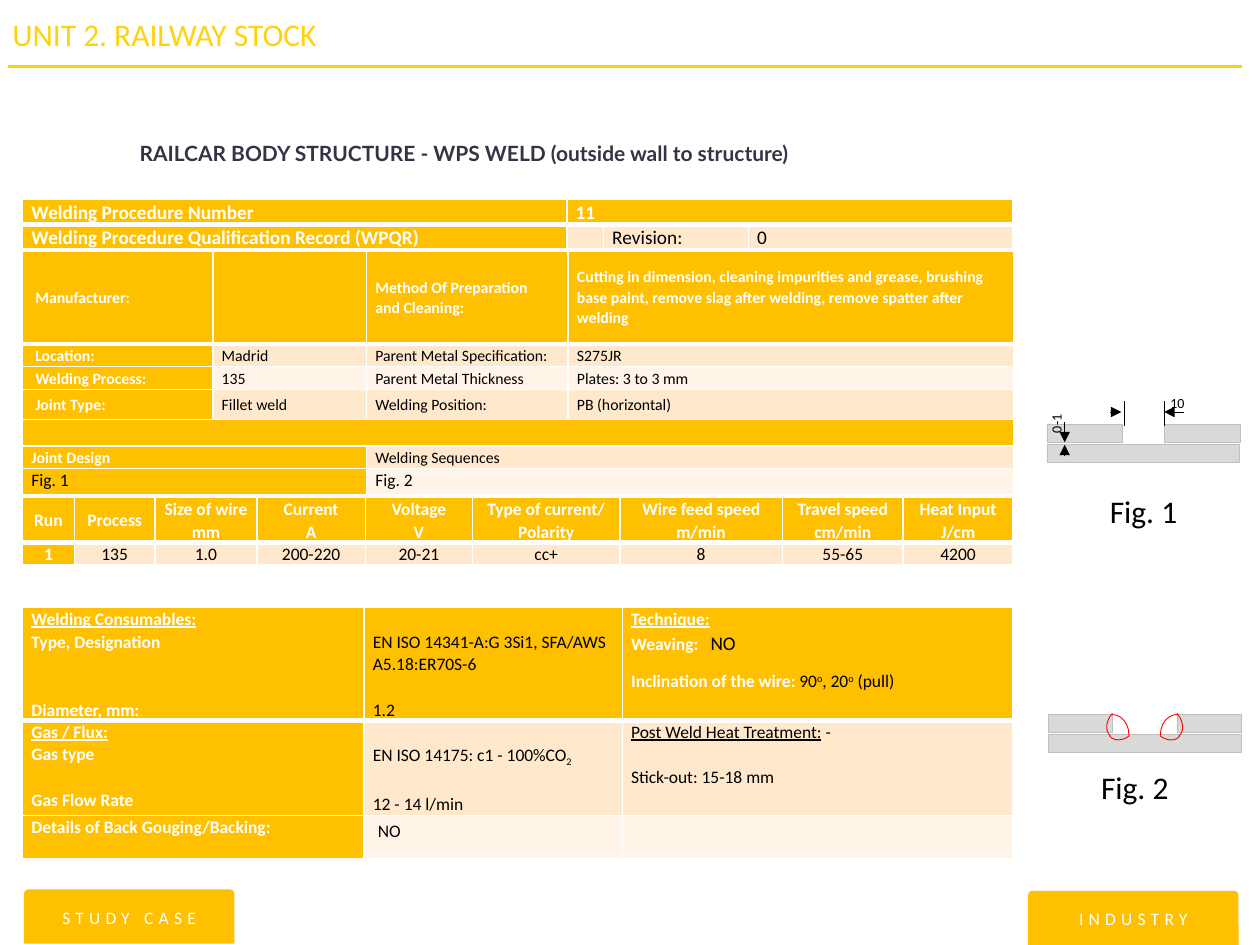
from dataclasses import dataclass

from lxml import etree
from pptx import Presentation
from pptx.dml.color import RGBColor
from pptx.enum import shapes, text
from pptx.oxml import ns
from pptx.util import Inches, Pt


class Theme:
    gold, yellow, white, black = "FFC000", "FED30D", "FFFFFF", "000000"
    ink, steel, steel_edge, weld = "363346", "D9D9D9", "BFBFBF", "FF0000"
    fills = {"G": gold, "L": "FFE8CC", "P": "FFF4E7"}
    body, heading = "Calibri", "Lato"
    title, subtitle, large, normal, small, tiny = 18, 12, 11, 10, 9, 8


@dataclass
class Box:
    left: float
    top: float
    width: float
    height: float

    def inside(self, x, y, width, height):
        return Box(self.left + x, self.top + y, width, height)

    def emu(self):
        return [Inches(v) for v in (self.left, self.top, self.width, self.height)]


@dataclass
class Span:
    text: str
    color: str = None
    size: float = None
    underline: bool = False
    baseline: int = 0


def color(value):
    return RGBColor.from_string(value)


def style(run, size, ink, font=Theme.body, bold=False):
    run.font.size, run.font.name, run.font.bold = Pt(size), font, bold
    run.font.color.rgb = color(ink)


def add_label(slide, box, words, size, ink=Theme.black, wrap=False, **font):
    shape = slide.shapes.add_textbox(*box.emu())
    frame = shape.text_frame
    frame.text, frame.word_wrap = words, wrap
    style(frame.paragraphs[0].runs[0], size, ink, **font)
    return shape


def add_line(slide, box, start, end, ink=Theme.black, width=0.25, arrow=False):
    (x1, y1), (x2, y2) = start, end
    line = slide.shapes.add_connector(
        shapes.MSO_CONNECTOR.STRAIGHT, Inches(box.left + x1), Inches(box.top + y1),
        Inches(box.left + x2), Inches(box.top + y2))
    line.line.color.rgb, line.line.width = color(ink), Pt(width)
    properties = line._element.spPr
    if arrow:
        etree.SubElement(properties.find(ns.qn("a:ln")), ns.qn("a:tailEnd"), type="triangle")
    etree.SubElement(properties, ns.qn("a:effectLst"))


def add_plate(slide, box):
    plate = slide.shapes.add_shape(shapes.MSO_SHAPE.RECTANGLE, *box.emu())
    plate.shadow.inherit = False
    plate.fill.solid()
    plate.fill.fore_color.rgb = color(Theme.steel)
    plate.line.color.rgb, plate.line.width = color(Theme.steel_edge), Pt(0.25)


# Tables
def set_border(cell, bottom):
    properties = cell._tc.get_or_add_tcPr()
    for side, width in (("L", 1), ("R", 1), ("T", 1), ("B", bottom)):
        line = etree.SubElement(properties, ns.qn("a:ln" + side), w=str(Pt(width)))
        fill = etree.SubElement(line, ns.qn("a:solidFill"))
        etree.SubElement(fill, ns.qn("a:srgbClr"), val=Theme.white)


def fill_cell(cell, content, fill, size, align, anchor, bottom):
    """Content is a string or a list of paragraphs, each a string or a list of spans."""
    set_border(cell, bottom)
    cell.fill.solid()
    cell.fill.fore_color.rgb = color(Theme.fills[fill])
    cell.margin_left = cell.margin_right = Inches(0.07)
    cell.margin_top = cell.margin_bottom = 0
    cell.vertical_anchor = anchor
    default_ink = Theme.white if fill == "G" else Theme.black
    frame = cell.text_frame
    for index, spans in enumerate(content if isinstance(content, list) else [content]):
        paragraph = frame.add_paragraph() if index else frame.paragraphs[0]
        paragraph.alignment, paragraph.line_spacing = align, 1.07
        for span in [Span(spans)] if isinstance(spans, str) else spans:
            ink = span.color or default_ink
            for number, words in enumerate(span.text.split("\v")):
                if number:
                    paragraph.add_line_break()
                if not words:
                    continue
                run = paragraph.add_run()
                run.text = words
                style(run, span.size or size, ink, bold=ink == Theme.white)
                run.font.underline = span.underline
                if span.baseline:
                    run._r.get_or_add_rPr().set("baseline", str(span.baseline * 1000))
        if not paragraph.runs:
            paragraph._p.get_or_add_endParaRPr().set("sz", str(size * 100))


def add_grid(slide, box, columns, heights, rows, fills, size, align=text.PP_ALIGN.LEFT,
             anchor=text.MSO_ANCHOR.MIDDLE, merges=()):
    table = slide.shapes.add_table(len(rows), len(columns), *box.emu()).table
    table.first_row = table.horz_banding = False
    for column, width in zip(table.columns, columns):
        column.width = Inches(width)
    for r, (row, height) in enumerate(zip(rows, heights)):
        table.rows[r].height = Inches(height)
        for c, content in enumerate(row):
            fill_cell(table.cell(r, c), content, fills[r][c], size, align, anchor,
                      3 if r == 0 else 1)
    for r, first, last in merges:
        table.cell(r, first).merge(table.cell(r, last))
    return table


def add_procedure(slide, box):
    add_grid(slide, box, [4.32, 0.29, 1.15, 2.1], [0.2, 0.18], [
        ["Welding Procedure Number", "11", "", ""],
        ["Welding Procedure Qualification Record (WPQR)", "", "Revision:", "0"],
    ], ["GGGG", "GLLL"], Theme.large, merges=[(0, 1, 3)])


def add_details(slide, box):
    figures = [[[Span(f"Fig. {n}", Theme.black, Theme.normal)]] for n in (1, 2)]
    table = add_grid(slide, box, [1.51, 1.22, 1.6, 3.54],
                     [0.74, 0.18, 0.18, 0.24, 0.21, 0.18, 0.21], [
        ["Manufacturer:", "", "Method Of Preparation\vand Cleaning:",
         "Cutting in dimension, cleaning impurities and grease, brushing base paint, "
         "remove slag after welding, remove spatter after welding"],
        ["Location:", "Madrid", "Parent Metal Specification:", "S275JR"],
        ["Welding Process:", "135", "Parent Metal Thickness", "Plates: 3 to 3 mm"],
        ["Joint Type:", "Fillet weld", "Welding Position:", "PB (horizontal)"],
        ["", "", "", ""],
        ["Joint Design", "", "Welding Sequences", ""],
        [figures[0], "", figures[1], ""],
    ], ["GGGG", "GLLL", "GPPP", "GLLL", "GGGG", "GGLL", "GGPP"], Theme.small,
        merges=[(4, 0, 3), (5, 0, 1), (5, 2, 3), (6, 0, 1), (6, 2, 3)])
    for r in range(4):
        table.cell(r, 0).margin_left = Inches(0.1)
    for c in (0, 2):
        table.cell(6, c).vertical_anchor = text.MSO_ANCHOR.TOP


def add_runs(slide, box):
    add_grid(slide, box, [0.41, 0.64, 0.81, 0.86, 0.85, 1.17, 1.29, 0.96, 0.87], [0.35, 0.17], [
        ["Run", "Process", "Size of wire\vmm", "Current\vA", "Voltage\vV",
         ["Type of current/", "Polarity"], ["Wire feed speed", "m/min"],
         ["Travel speed", "cm/min"], ["Heat Input", "J/cm"]],
        ["1", "135", "1.0", "200-220", "20-21", "cc+", "8", "55-65", "4200"],
    ], ["G" * 9, "G" + "L" * 8], Theme.normal, align=text.PP_ALIGN.CENTER)


def add_consumables(slide, box):
    def dark(words, **options):
        return Span(words, Theme.black, **options)

    def headed(heading, rest):
        return [Span(heading, underline=True), Span(rest)]

    table = add_grid(slide, box, [2.71, 2.05, 3.1], [0.87, 0.73, 0.34], [
        [[headed("Welding Consumables:", "\vType, Designation"), "Diameter, mm:"],
         [[dark("EN ISO 14341-A:G 3Si1, SFA/AWS A5.18:ER70S-6")], [dark("1.2")]],
         [[Span("Technique:", underline=True)],
          [Span("Weaving:\t"), dark("NO", size=Theme.large)],
          [Span("Inclination of the wire: "), dark("90"), dark("o", baseline=30),
           dark(", 20"), dark("o", baseline=30), dark(" (pull)")]]],
        [[headed("Gas / Flux:", "\vGas type"), "Gas Flow Rate"],
         [[Span("EN ISO 14175: c1 - 100%CO"), Span("2", baseline=-25)], "12 - 14 l/min"],
         [headed("Post Weld Heat Treatment:", " -"), "Stick-out: 15-18 mm"]],
        ["Details of Back Gouging/Backing:", "NO", ""],
    ], ["GGG", "GLL", "GPP"], Theme.normal, anchor=text.MSO_ANCHOR.TOP)
    # Gaps between the entries of a cell
    for r, c, number, gap in ((0, 0, 1, 26), (0, 1, 1, 13), (0, 2, 2, 8),
                              (1, 0, 1, 13), (1, 1, 1, 14), (1, 2, 1, 13)):
        table.cell(r, c).text_frame.paragraphs[number].space_before = Pt(gap)
    for r in (0, 1):
        table.cell(r, 1).margin_top = Inches(0.18)
    table.cell(2, 1).margin_left, table.cell(2, 1).margin_top = Inches(0.11), Inches(0.03)
    weaving = table.cell(0, 2).text_frame.paragraphs[1]._p.get_or_add_pPr()
    tabs = etree.SubElement(weaving, ns.qn("a:tabLst"))
    etree.SubElement(tabs, ns.qn("a:tab"), pos=str(Inches(0.63)), algn="l")


# Figures
def add_joint_design(slide, box):
    for x, y, width in ((0, 0.35, 1.53), (0, 0.19, 0.6), (0.93, 0.19, 0.6)):
        add_plate(slide, box.inside(x, y, width, 0.14))
    for start, end in (((0.14, 0.44), (0.14, 0.35)), ((0.14, 0.17), (0.14, 0.33)),
                       ((0.5, 0.09), (0.59, 0.09)), ((1.09, 0.09), (0.93, 0.09))):
        add_line(slide, box, start, end, arrow=True)
    for x in (0.61, 0.93):
        add_line(slide, box, (x, 0.2), (x, 0))
    add_label(slide, box.inside(-0.1, 0.06, 0.35, 0.24), "0-1", Theme.tiny).rotation = 270
    add_label(slide, box.inside(0.88, -0.1, 0.31, 0.24), "10", Theme.tiny)
    add_label(slide, box.inside(0.4, 0.68, 0.74, 0.4), "Fig. 1", Theme.title)


def add_weld_sequence(slide, box):
    for x, y, width in ((0, 0.24, 1.53), (0, 0.08, 0.51), (1.02, 0.08, 0.51)):
        add_plate(slide, box.inside(x, y, width, 0.14))
    # Left weld outline, mirrored about the middle for the right one
    for x, y, width, height, rotation, flipped, sweep in (
            (0.48, 0, 0.22, 0.29, 221.7, False, 0), (0.37, 0.08, 0.27, 0.32, 0, False, 2.11),
            (0.49, 0.05, 0.19, 0.25, 231.3, True, 0)):
        for mirrored in (False, True):
            left = box.width - x - width if mirrored else x
            arc = slide.shapes.add_shape(shapes.MSO_SHAPE.ARC,
                                         *box.inside(left, y, width, height).emu())
            arc.shadow.inherit = False
            arc.fill.background()
            arc.line.color.rgb, arc.line.width = color(Theme.weld), Pt(0.5)
            arc.adjustments[0], arc.adjustments[1] = 162, sweep
            arc.rotation = -rotation % 360 if mirrored else rotation
            if flipped != mirrored:
                arc._element.spPr.find(ns.qn("a:xfrm")).set("flipH", "1")
    add_label(slide, box.inside(0.32, 0.46, 0.74, 0.4), "Fig. 2", Theme.title)


# Header and footer
def add_header(slide, box):
    add_line(slide, box, (0.06, 0.53), (9.86, 0.53), Theme.yellow, 1.5)
    title = add_label(slide, box.inside(0, 0.07, 4.01, 0.44), "UNIT 2. RAILWAY STOCK",
                      Theme.title, Theme.yellow, wrap=True)
    title.text_frame.vertical_anchor = text.MSO_ANCHOR.MIDDLE
    title.text_frame.paragraphs[0].line_spacing = 0.9
    add_label(slide, box.inside(1.01, 1.07, 7.04, 0.3),
              "RAILCAR BODY STRUCTURE - WPS WELD (outside wall to structure)",
              Theme.subtitle, Theme.ink, wrap=True, font=Theme.heading, bold=True)


def add_tab(slide, box, words):
    tab = slide.shapes.add_shape(shapes.MSO_SHAPE.ROUND_2_SAME_RECTANGLE, *box.emu())
    tab.shadow.inherit = False
    tab.adjustments[0] = 0.08
    tab.fill.solid()
    tab.fill.fore_color.rgb = color(Theme.gold)
    tab.line.fill.background()
    tab.text_frame.text = words
    tab.text_frame.vertical_anchor = text.MSO_ANCHOR.MIDDLE
    paragraph = tab.text_frame.paragraphs[0]
    paragraph.alignment = text.PP_ALIGN.CENTER
    style(paragraph.runs[0], Theme.normal, Theme.white)
    paragraph.runs[0]._r.get_or_add_rPr().set("spc", "300")


def main():
    presentation = Presentation()
    presentation.slide_width, presentation.slide_height = Inches(10), Inches(7.5)
    slide = presentation.slides.add_slide(presentation.slide_layouts[6])
    add_header(slide, Box(0, 0, 10, 1.4))
    add_procedure(slide, Box(0.18, 1.58, 7.86, 0.38))
    add_details(slide, Box(0.18, 1.99, 7.86, 1.94))
    add_runs(slide, Box(0.18, 3.95, 7.86, 0.52))
    add_consumables(slide, Box(0.18, 4.82, 7.86, 1.94))
    add_joint_design(slide, Box(8.31, 3.18, 1.53, 1.08))
    add_weld_sequence(slide, Box(8.32, 5.59, 1.53, 0.86))
    add_tab(slide, Box(0.19, 7.06, 1.67, 0.43), "STUDY CASE")
    add_tab(slide, Box(8.16, 7.07, 1.67, 0.43), "INDUSTRY")
    presentation.save("out.pptx")


if __name__ == "__main__":
    main()
